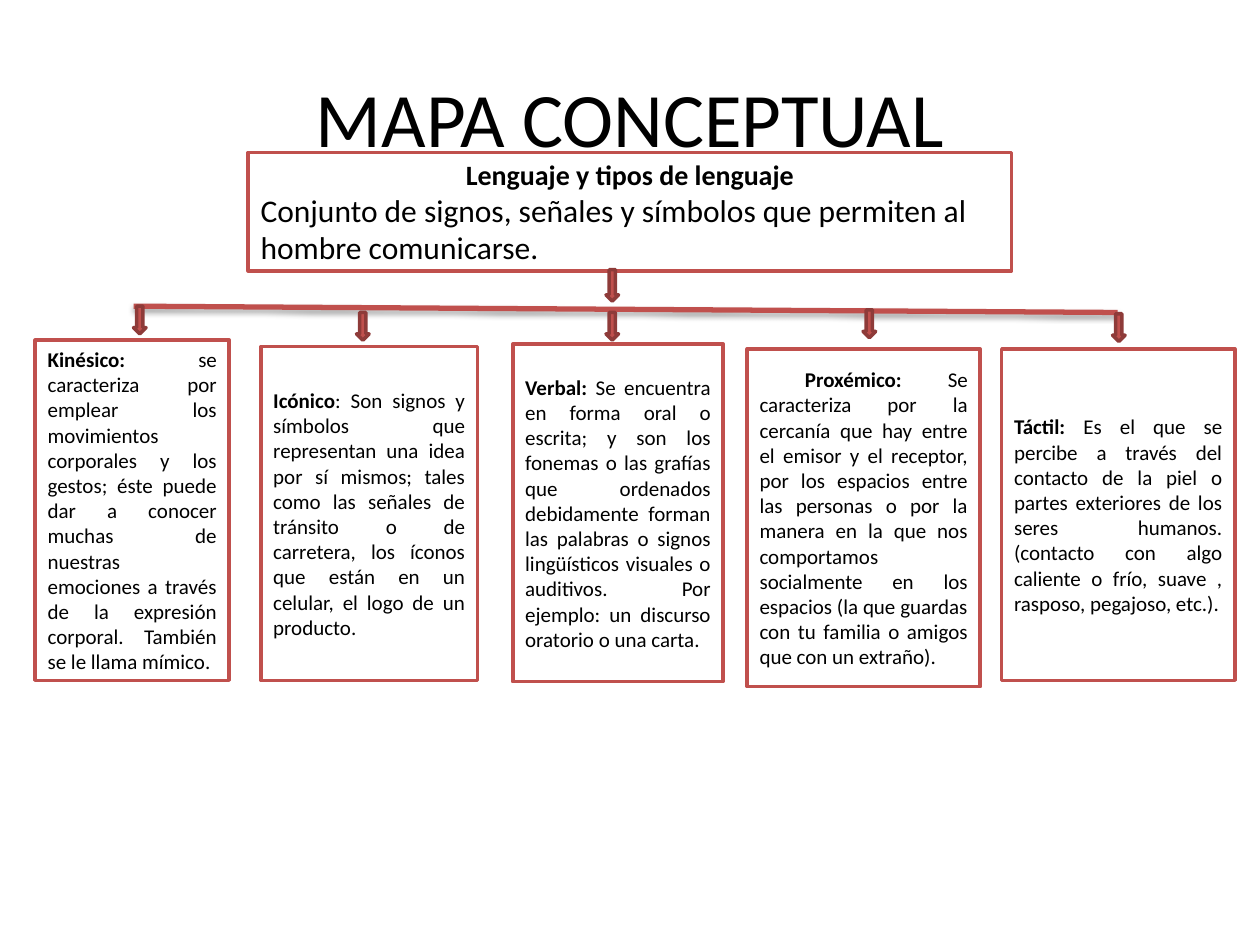
from dataclasses import dataclass

from lxml import etree
from pptx import Presentation
from pptx.dml.color import RGBColor
from pptx.enum import shapes, text
from pptx.oxml import ns
from pptx.util import Inches, Pt

FONT = "Calibri"
BLACK = RGBColor(0x00, 0x00, 0x00)
WHITE = RGBColor(0xFF, 0xFF, 0xFF)
RED = RGBColor(0xC0, 0x50, 0x4D)
DARK_RED = RGBColor(0x8E, 0x3B, 0x39)
ARROW_WIDTH = 0.1


@dataclass
class Branch:
    """One kind of language: its box and the arrow that leads to it."""
    name: str
    definition: str
    left: float
    top: float
    width: float
    height: float
    arrow_x: float
    arrow_top: float
    first_indent: float = 0


BRANCHES = [
    Branch("Kinésico: ",
           "se caracteriza por emplear los movimientos corporales y los gestos; éste "
           "puede dar a conocer muchas de nuestras emociones a través de la expresión "
           "corporal. También se le llama mímico.",
           0.28, 2.7, 1.54, 2.7, 1.11, 2.43),
    Branch("Icónico",
           ": Son signos y símbolos que representan una idea por sí mismos; tales como "
           "las señales de tránsito o de carretera, los íconos que están en un celular, "
           "el logo de un producto.",
           2.07, 2.75, 1.72, 2.65, 2.88, 2.48),
    Branch("Verbal: ",
           "Se encuentra en forma oral o escrita; y son los fonemas o las grafías que "
           "ordenados debidamente forman las palabras o signos lingüísticos visuales o "
           "auditivos. Por ejemplo: un discurso oratorio o una carta.",
           4.07, 2.73, 1.67, 2.68, 4.86, 2.48),
    Branch("Proxémico: ",
           "Se caracteriza por la cercanía que hay entre el emisor y el receptor, por "
           "los espacios entre las personas o por la manera en la que nos comportamos "
           "socialmente en los espacios (la que guardas con tu familia o amigos que con "
           "un extraño).",
           5.93, 2.77, 1.85, 2.68, 6.9, 2.46, first_indent=0.36),
    Branch("Táctil: ",
           "Es el que se percibe a través del contacto de la piel o partes exteriores de "
           "los seres humanos. (contacto con algo caliente o frío, suave , rasposo, "
           "pegajoso, etc.).",
           7.95, 2.77, 1.85, 2.63, 8.88, 2.49),
]


def add_span(para, words: str, size: float, bold: bool = False) -> None:
    span = para.add_run()
    span.text = words
    for name, value in {"name": FONT, "size": Pt(size), "bold": bold}.items():
        setattr(span.font, name, value)
    span.font.color.rgb = BLACK


def add_filled(page, kind, left: float, top: float, width: float, height: float,
               fill: RGBColor, line: RGBColor):
    shape = page.shapes.add_shape(kind, Inches(left), Inches(top),
                                  Inches(width), Inches(height))
    shape.shadow.inherit = False
    shape.fill.solid()
    shape.fill.fore_color.rgb = fill
    shape.line.color.rgb = line
    shape.line.width = Pt(2)
    return shape


def add_box(page, left: float, top: float, width: float, height: float):
    """Add a white, red-edged rectangle and return its text frame."""
    box = add_filled(page, shapes.MSO_SHAPE.RECTANGLE, left, top, width, height, WHITE, RED)
    box.text_frame.word_wrap = True
    box.text_frame.vertical_anchor = text.MSO_ANCHOR.MIDDLE
    return box.text_frame


def add_arrow(page, center_x: float, top: float, height: float = 0.22) -> None:
    add_filled(page, shapes.MSO_SHAPE.DOWN_ARROW, center_x - ARROW_WIDTH / 2, top,
               ARROW_WIDTH, height, RED, DARK_RED)


def add_title(page) -> None:
    title = page.shapes.title
    place = {"left": 0.5, "top": 0.3, "width": 9, "height": 1.25}
    for name, value in place.items():
        setattr(title, name, Inches(value))
    title.text_frame.vertical_anchor = text.MSO_ANCHOR.MIDDLE
    para = title.text_frame.paragraphs[0]
    para.alignment = text.PP_ALIGN.CENTER
    add_span(para, "MAPA CONCEPTUAL", 44)


def add_root(page) -> None:
    frame = add_box(page, 1.97, 1.21, 6.06, 0.94)
    heading = frame.paragraphs[0]
    heading.alignment = text.PP_ALIGN.CENTER
    add_span(heading, "Lenguaje y tipos de lenguaje", 16, bold=True)
    definition = frame.add_paragraph()
    definition.alignment = text.PP_ALIGN.LEFT
    add_span(definition, "Conjunto de signos, señales y símbolos que permiten al hombre "
                         "comunicarse.", 18)


def add_branch(page, branch: Branch) -> None:
    frame = add_box(page, branch.left, branch.top, branch.width, branch.height)
    para = frame.paragraphs[0]
    para.alignment = text.PP_ALIGN.JUSTIFY
    if branch.first_indent:
        para._p.get_or_add_pPr().set("indent", str(Inches(branch.first_indent)))
    add_span(para, branch.name, 12, bold=True)
    add_span(para, branch.definition, 12)


def add_trunk(page) -> None:
    """Add the line that joins the branches, with its soft shadow."""
    trunk = page.shapes.add_connector(shapes.MSO_CONNECTOR.STRAIGHT, Inches(1.06),
                                      Inches(2.43), Inches(8.87), Inches(2.48))
    trunk.line.color.rgb = RED
    trunk.line.width = Pt(3)
    effects = etree.SubElement(trunk._element.spPr, ns.qn("a:effectLst"))
    shadow = etree.SubElement(effects, ns.qn("a:outerShdw"), blurRad=str(Pt(3.1)),
                              dist=str(Pt(1.8)), dir="5400000", rotWithShape="0")
    color = etree.SubElement(shadow, ns.qn("a:srgbClr"), val=str(BLACK))
    etree.SubElement(color, ns.qn("a:alpha"), val="35000")


def main() -> None:
    deck = Presentation()
    deck.slide_width, deck.slide_height = Inches(10), Inches(7.5)
    page = deck.slides.add_slide(deck.slide_layouts[5])
    add_title(page)
    add_root(page)
    add_trunk(page)
    for branch in BRANCHES:
        add_branch(page, branch)
        add_arrow(page, branch.arrow_x, branch.arrow_top)
    add_arrow(page, 4.86, 2.14, height=0.25)
    deck.save("out.pptx")


if __name__ == "__main__":
    main()
